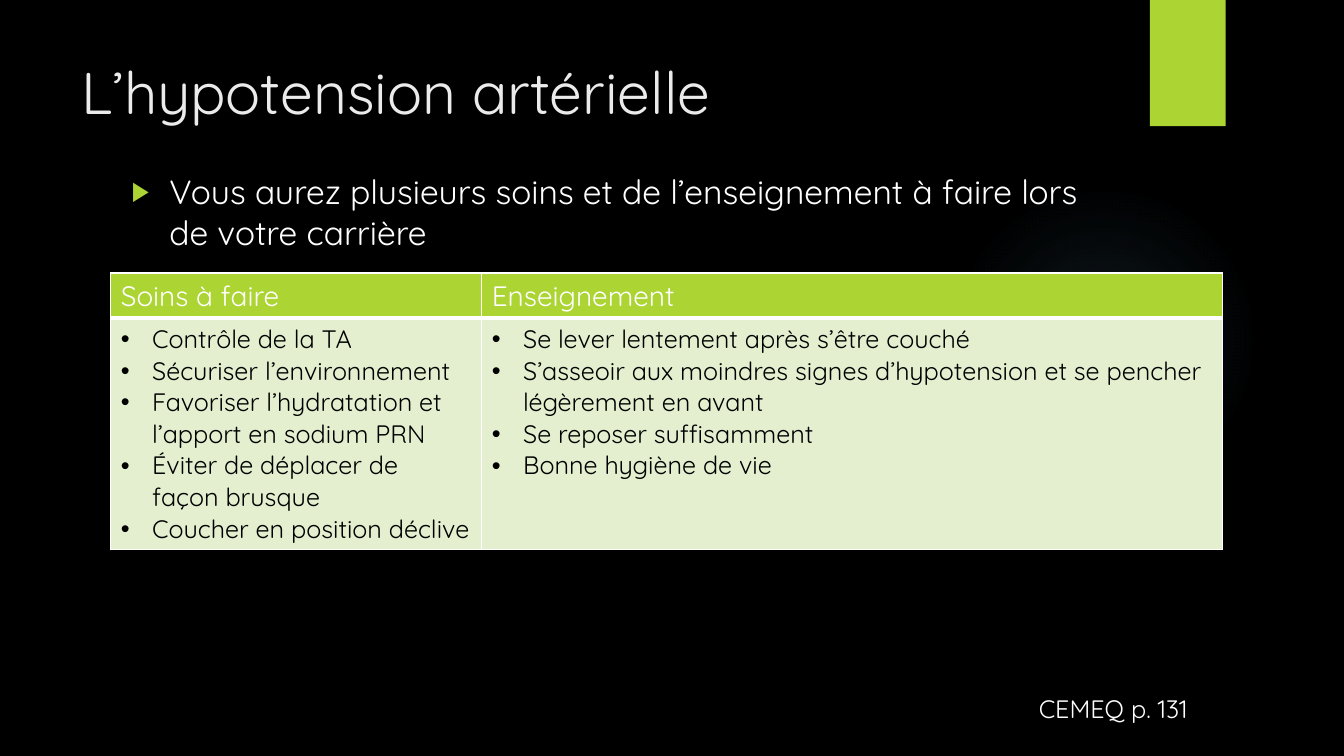
"""Build the slide on care and teaching for arterial hypotension."""
from dataclasses import dataclass

from lxml.etree import SubElement
from pptx import Presentation
from pptx.dml.color import RGBColor
from pptx.enum.shapes import MSO_SHAPE as Preset
from pptx.enum.text import MSO_ANCHOR as Anchor
from pptx.oxml import parse_xml
from pptx.oxml.ns import nsdecls, qn
from pptx.util import Cm, Pt

BLACK = RGBColor(0x00, 0x00, 0x00)
WHITE = RGBColor(0xFF, 0xFF, 0xFF)
OFF_WHITE = RGBColor(0xEB, 0xEB, 0xEB)
GREEN = RGBColor(0xAC, 0xD4, 0x33)
PALE_GREEN = RGBColor(0xE3, 0xEF, 0xCE)
GLOW_BLUE = RGBColor(0x7A, 0xC4, 0xF0)
FONT = "Quicksand"
GLOW_STOPS = ((0, 7), (36, 6), (69, 0))


@dataclass(frozen=True)
class Bullet:
    symbol: str
    indent: float
    font: str = "Arial"
    color: RGBColor | None = None
    percent: int = 100


@dataclass(frozen=True)
class Label:
    text: str
    left: float
    top: float
    width: float
    height: float
    size: int
    color: RGBColor
    bullet: Bullet | None = None


@dataclass(frozen=True)
class Column:
    heading: str
    width: float
    items: tuple[str, ...]


ARROW = Bullet("▶", 0.95, color=GREEN, percent=80)
DOT = Bullet("•", 0.79)
LABELS = (
    Label("L’hypotension artérielle", 1.8, 1.27, 26.14, 3.89, 42, OFF_WHITE),
    Label("Vous aurez plusieurs soins et de l’enseignement à faire lors de votre carrière",
          3.07, 4.19, 24.84, 2.69, 24, WHITE, ARROW),
    Label("CEMEQ p. 131", 25.93, 17.35, 7.62, 1.02, 18, WHITE),
)
COLUMNS = (
    Column("Soins à faire", 9.35, (
        "Contrôle de la TA",
        "Sécuriser l’environnement",
        "Favoriser l’hydratation et l’apport en sodium PRN",
        "Éviter de déplacer de façon brusque",
        "Coucher en position déclive",
    )),
    Column("Enseignement", 18.67, (
        "Se lever lentement après s’être couché",
        "S’asseoir aux moindres signes d’hypotension et se pencher légèrement en avant",
        "Se reposer suffisamment",
        "Bonne hygiène de vie",
    )),
)
ROW_HEIGHTS = (1.14, 5.82)


def add_bullet(para, bullet: Bullet) -> None:
    """Give a paragraph a hanging bullet."""
    props = para._p.get_or_add_pPr()
    props.set("marL", str(Cm(bullet.indent)))
    props.set("indent", str(-Cm(bullet.indent)))
    if bullet.color is not None:
        SubElement(SubElement(props, qn("a:buClr")), qn("a:srgbClr"), val=str(bullet.color))
    SubElement(props, qn("a:buSzPct"), val=str(bullet.percent * 1000))
    SubElement(props, qn("a:buFont"), typeface=bullet.font)
    SubElement(props, qn("a:buChar"), char=bullet.symbol)


def write_lines(frame, lines: tuple[str, ...], size: int, color: RGBColor,
                bullet: Bullet | None = None) -> None:
    """Write one styled paragraph for each line."""
    for index, line in enumerate(lines):
        para = frame.add_paragraph() if index else frame.paragraphs[0]
        para.text = line
        if bullet is not None:
            add_bullet(para, bullet)
        para.font.name = FONT
        para.font.size = Pt(size)
        para.font.bold = False
        para.font.color.rgb = color


def add_label(page, label: Label) -> None:
    """Add a wrapped text box."""
    box = page.shapes.add_textbox(Cm(label.left), Cm(label.top), Cm(label.width), Cm(label.height))
    box.text_frame.word_wrap = True
    box.text_frame.vertical_anchor = Anchor.TOP
    write_lines(box.text_frame, (label.text,), label.size, label.color, label.bullet)


def add_glow(page) -> None:
    """Add the faint round glow behind the table."""
    glow = page.shapes.add_shape(Preset.OVAL, Cm(23.9), Cm(4.65), Cm(7.82), Cm(7.82))
    glow.shadow.inherit = False
    glow.line.fill.background()
    stops = "".join(
        f'<a:gs pos="{position * 1000}"><a:srgbClr val="{GLOW_BLUE}">'
        f'<a:alpha val="{opacity * 1000}"/></a:srgbClr></a:gs>'
        for position, opacity in GLOW_STOPS
    )
    gradient = parse_xml(
        f'<a:gradFill {nsdecls("a")}><a:gsLst>{stops}</a:gsLst><a:path path="circle">'
        '<a:fillToRect l="50000" t="50000" r="50000" b="50000"/></a:path></a:gradFill>'
    )
    glow._element.spPr.find(qn("a:prstGeom")).addnext(gradient)


def add_tab(page) -> None:
    """Add the green tab at the top edge."""
    tab = page.shapes.add_shape(Preset.RECTANGLE, Cm(28.98), Cm(0), Cm(1.91), Cm(3.18))
    tab.shadow.inherit = False
    tab.fill.solid()
    tab.fill.fore_color.rgb = GREEN
    tab.line.fill.background()


def style_cell(cell, fill: RGBColor, bottom: int) -> None:
    """Fill a cell and draw its white borders."""
    cell.fill.solid()
    cell.fill.fore_color.rgb = fill
    props = cell._tc.get_or_add_tcPr()
    for index, (side, width) in enumerate((("L", 1), ("R", 1), ("T", 1), ("B", bottom))):
        border = parse_xml(
            f'<a:ln{side} {nsdecls("a")} w="{Pt(width)}"><a:solidFill>'
            f'<a:srgbClr val="{WHITE}"/></a:solidFill></a:ln{side}>'
        )
        props.insert(index, border)


def add_care_table(page) -> None:
    """Add the table of care and teaching."""
    width = sum(column.width for column in COLUMNS)
    table = page.shapes.add_table(len(ROW_HEIGHTS), len(COLUMNS), Cm(2.79), Cm(6.88),
                                  Cm(width), Cm(sum(ROW_HEIGHTS))).table
    table.horz_banding = False
    for row, height in zip(table.rows, ROW_HEIGHTS):
        row.height = Cm(height)
    for index, column in enumerate(COLUMNS):
        table.columns[index].width = Cm(column.width)
        heading, body = table.cell(0, index), table.cell(1, index)
        style_cell(heading, GREEN, 3)
        style_cell(body, PALE_GREEN, 1)
        write_lines(heading.text_frame, (column.heading,), 20, WHITE)
        write_lines(body.text_frame, column.items, 18, BLACK, DOT)


def main() -> None:
    """Build and save the deck."""
    deck = Presentation()
    deck.slide_width, deck.slide_height = Cm(33.87), Cm(19.05)
    page = deck.slides.add_slide(deck.slide_layouts[6])
    page.background.fill.solid()
    page.background.fill.fore_color.rgb = BLACK
    add_glow(page)
    add_tab(page)
    for label in LABELS:
        add_label(page, label)
    add_care_table(page)
    deck.save("out.pptx")


if __name__ == "__main__":
    main()
